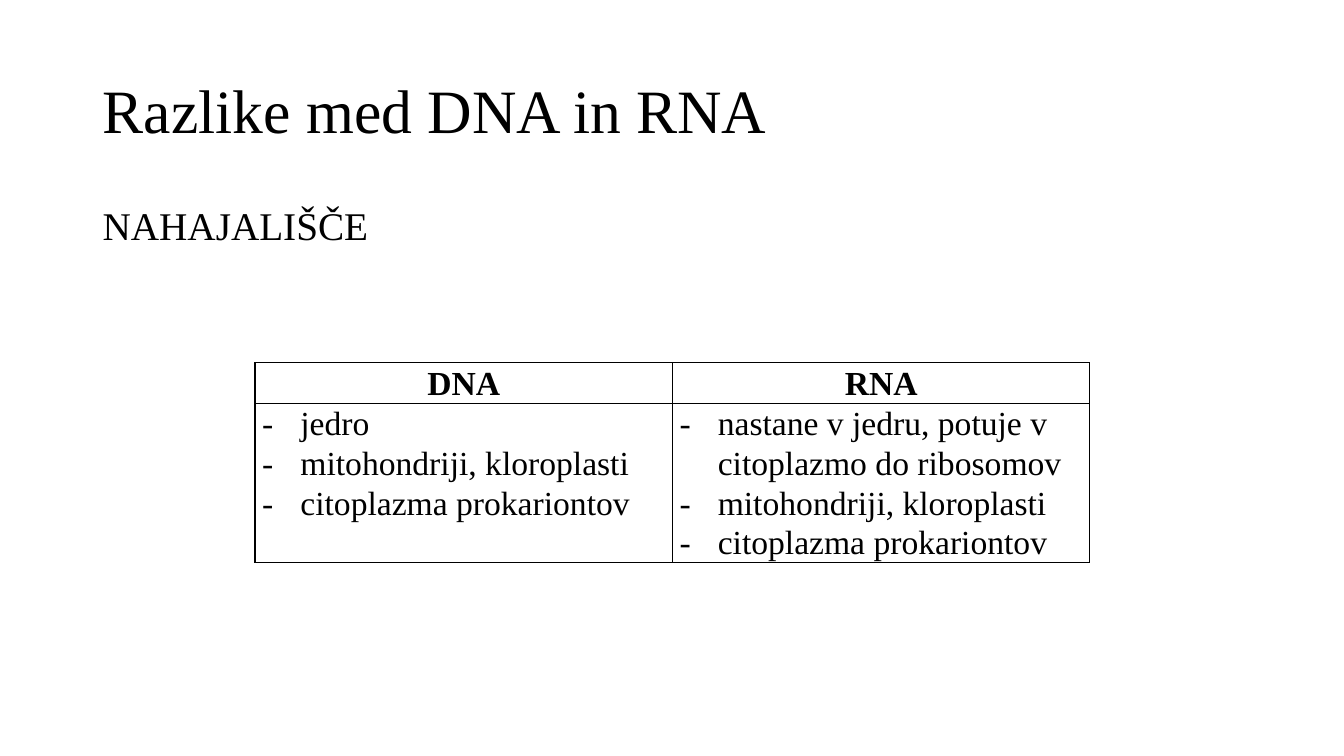
from dataclasses import dataclass

from lxml import etree
from pptx import Presentation
from pptx.dml.color import RGBColor
from pptx.enum.text import MSO_ANCHOR, MSO_AUTO_SIZE, PP_ALIGN
from pptx.oxml.ns import qn
from pptx.table import _Cell
from pptx.text.text import TextFrame, _Paragraph
from pptx.util import Inches, Pt

LEFT, CENTER = PP_ALIGN.LEFT, PP_ALIGN.CENTER
TOP, MIDDLE = MSO_ANCHOR.TOP, MSO_ANCHOR.MIDDLE
NO_AUTOFIT = MSO_AUTO_SIZE.NONE

FONT = "Times New Roman"
BLACK = "000000"
TITLE_ONLY = 5
COLUMN_WIDTH = 4.14
HEADER_HEIGHT, BODY_HEIGHT = 0.4, 1.58
BULLET_INDENT = 0.38


@dataclass
class Column:
    heading: str
    locations: list[str]


COLUMNS = [
    Column("DNA", ["jedro", "mitohondriji, kloroplasti", "citoplazma prokariontov"]),
    Column("RNA", ["nastane v jedru, potuje v citoplazmo do ribosomov",
                   "mitohondriji, kloroplasti", "citoplazma prokariontov"]),
]


def color(value: str) -> RGBColor:
    return RGBColor.from_string(value)


def write(paragraph: _Paragraph, text: str, size: float, spacing: float,
          alignment: PP_ALIGN = LEFT, bold: bool = False) -> None:
    paragraph.alignment = alignment
    paragraph.line_spacing = spacing
    run = paragraph.add_run()
    run.text = text
    run.font.name = FONT
    run.font.size = Pt(size)
    run.font.bold = bold
    run.font.color.rgb = color(BLACK)


def write_line(frame: TextFrame, text: str, size: float, anchor: MSO_ANCHOR) -> None:
    frame.word_wrap = True
    frame.auto_size = NO_AUTOFIT
    frame.vertical_anchor = anchor
    write(frame.paragraphs[0], text, size, 0.9)


def add_dash(paragraph: _Paragraph) -> None:
    properties = paragraph._p.get_or_add_pPr()
    properties.set("marL", str(Inches(BULLET_INDENT)))
    properties.set("indent", str(-Inches(BULLET_INDENT)))
    etree.SubElement(properties, qn("a:buFont"), typeface=FONT)
    etree.SubElement(properties, qn("a:buChar"), char="-")


def format_cell(cell: _Cell) -> None:
    cell.margin_left = cell.margin_right = Inches(0.07)
    cell.margin_top = cell.margin_bottom = 0
    properties = cell._tc.get_or_add_tcPr()
    for side in ("a:lnL", "a:lnR", "a:lnT", "a:lnB"):
        line = etree.SubElement(properties, qn(side), w=str(Pt(1)))
        fill = etree.SubElement(line, qn("a:solidFill"))
        etree.SubElement(fill, qn("a:srgbClr"), val=BLACK)
    cell.fill.background()


def main() -> None:
    presentation = Presentation()
    presentation.slide_width = Inches(13.33)
    presentation.slide_height = Inches(7.5)
    slide = presentation.slides.add_slide(presentation.slide_layouts[TITLE_ONLY])

    # Title and subheading
    title = slide.shapes.title
    title.left, title.top = Inches(0.92), Inches(0.4)
    title.width, title.height = Inches(11.5), Inches(1.45)
    write_line(title.text_frame, "Razlike med DNA in RNA", 44, MIDDLE)
    subheading = slide.shapes.add_textbox(
        Inches(0.92), Inches(2), Inches(11.5), Inches(4.76))
    write_line(subheading.text_frame, "NAHAJALIŠČE", 28, TOP)

    # Comparison table
    table = slide.shapes.add_table(
        2, len(COLUMNS), Inches(2.53), Inches(3.6),
        Inches(COLUMN_WIDTH * len(COLUMNS)), Inches(HEADER_HEIGHT + BODY_HEIGHT)).table
    table.first_row = table.horz_banding = False
    table.rows[0].height = Inches(HEADER_HEIGHT)
    table.rows[1].height = Inches(BODY_HEIGHT)
    for index, column in enumerate(COLUMNS):
        table.columns[index].width = Inches(COLUMN_WIDTH)
        header, body = table.cell(0, index), table.cell(1, index)
        format_cell(header)
        format_cell(body)
        write(header.text_frame.paragraphs[0], column.heading, 24, 1.07, CENTER, True)
        for number, location in enumerate(column.locations):
            frame = body.text_frame
            paragraph = frame.add_paragraph() if number else frame.paragraphs[0]
            add_dash(paragraph)
            write(paragraph, location, 24, 1.07)

    presentation.save("out.pptx")


if __name__ == "__main__":
    main()
